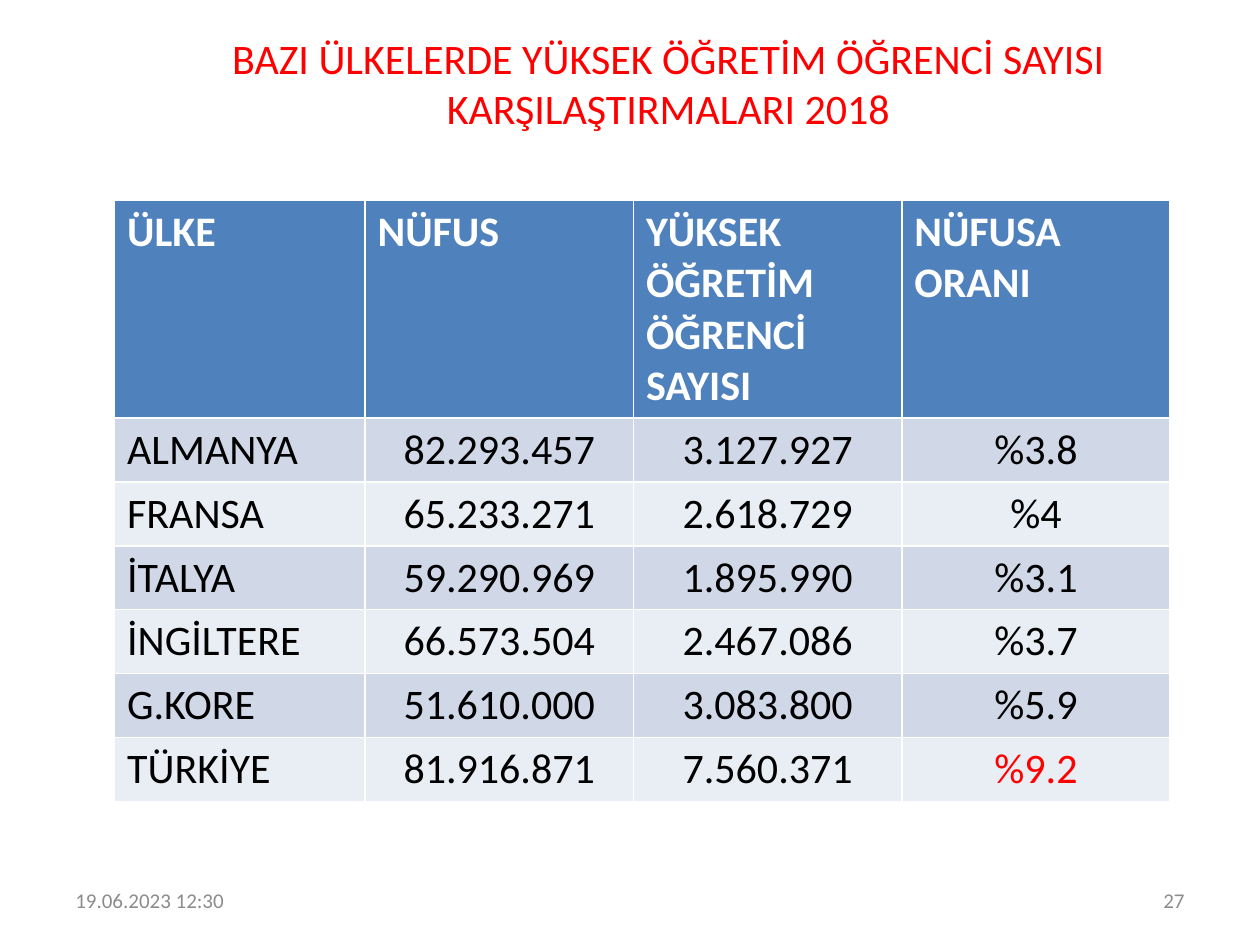
"""Build a slide comparing student numbers in higher education by country."""
from typing import NamedTuple

from pptx import Presentation
from pptx import util as u
from pptx.dml import color
from pptx.enum import text

FONT = "Calibri"
RED, BLACK, WHITE, GREY = "FF0000", "000000", "FFFFFF", "8C8C8C"
HEADER_FILL, BAND_FILLS = "4F81BD", ("E9EDF4", "D0D8E8")
LEFT, CENTER, RIGHT = text.PP_ALIGN.LEFT, text.PP_ALIGN.CENTER, text.PP_ALIGN.RIGHT

TITLE = "BAZI ÜLKELERDE YÜKSEK ÖĞRETİM ÖĞRENCİ SAYISI KARŞILAŞTIRMALARI 2018"
HEADINGS = ("ÜLKE", "NÜFUS", "YÜKSEK ÖĞRETİM ÖĞRENCİ SAYISI", "NÜFUSA ORANI")
COLUMN_WIDTHS = (5.05, 5.41, 5.41, 5.41)
ROW_HEIGHT = 1.03


class Country(NamedTuple):
    name: str
    population: str
    students: str
    share: str


class Footer(NamedTuple):
    left: float
    content: str
    alignment: text.PP_ALIGN


COUNTRIES = (
    Country("ALMANYA", "82.293.457", "3.127.927", "%3.8"),
    Country("FRANSA", "65.233.271", "2.618.729", "%4"),
    Country("İTALYA", "59.290.969", "1.895.990", "%3.1"),
    Country("İNGİLTERE", "66.573.504", "2.467.086", "%3.7"),
    Country("G.KORE", "51.610.000", "3.083.800", "%5.9"),
    Country("TÜRKİYE", "81.916.871", "7.560.371", "%9.2"),
)
FOOTERS = (
    Footer(1.27, "19.06.2023 12:30", LEFT),
    Footer(18.2, "27", RIGHT),
)


def rgb(value: str) -> color.RGBColor:
    return color.RGBColor.from_string(value)


def write(text_frame, content: str, size: int, ink: str, alignment, bold: bool = False) -> None:
    text_frame.text = content
    paragraph = text_frame.paragraphs[0]
    paragraph.alignment = alignment
    font = paragraph.runs[0].font
    font.name, font.size, font.bold = FONT, u.Pt(size), bold
    font.color.rgb = rgb(ink)


def fill_cell(cell, content: str, fill: str, ink: str, alignment, bold: bool = False) -> None:
    write(cell.text_frame, content, 24, ink, alignment, bold)
    cell.fill.solid()
    cell.fill.fore_color.rgb = rgb(fill)


def add_title(slide) -> None:
    title = slide.shapes.title
    title.left, title.top = u.Cm(3.38), u.Cm(0.58)
    title.width, title.height = u.Cm(20.19), u.Cm(2.18)
    write(title.text_frame, TITLE, 24, RED, CENTER)
    title.text_frame.vertical_anchor = text.MSO_ANCHOR.MIDDLE


def add_country_table(slide) -> None:
    row_count = len(COUNTRIES) + 1
    frame = slide.shapes.add_table(
        row_count, len(HEADINGS), u.Cm(2.31), u.Cm(4.04),
        u.Cm(sum(COLUMN_WIDTHS)), u.Cm(ROW_HEIGHT * row_count))
    table = frame.table
    for column, width in zip(table.columns, COLUMN_WIDTHS):
        column.width = u.Cm(width)
    for index, heading in enumerate(HEADINGS):
        fill_cell(table.cell(0, index), heading, HEADER_FILL, WHITE, LEFT, bold=True)
    for row, country in enumerate(COUNTRIES, start=1):
        for index, value in enumerate(country):
            highlighted = country.name == "TÜRKİYE" and value == country.share
            fill_cell(table.cell(row, index), value, BAND_FILLS[row % 2],
                      RED if highlighted else BLACK, CENTER if index else LEFT)


def add_footer(slide, footer: Footer) -> None:
    box = slide.shapes.add_textbox(u.Cm(footer.left), u.Cm(17.65), u.Cm(5.93), u.Cm(1.01))
    box.text_frame.word_wrap = True
    box.text_frame.vertical_anchor = text.MSO_ANCHOR.MIDDLE
    write(box.text_frame, footer.content, 12, GREY, footer.alignment)


def main() -> None:
    presentation = Presentation()
    presentation.slide_width, presentation.slide_height = u.Cm(25.4), u.Cm(19.05)
    slide = presentation.slides.add_slide(presentation.slide_layouts.get_by_name("Title Only"))
    add_title(slide)
    add_country_table(slide)
    for footer in FOOTERS:
        add_footer(slide, footer)
    presentation.save("out.pptx")


if __name__ == "__main__":
    main()
